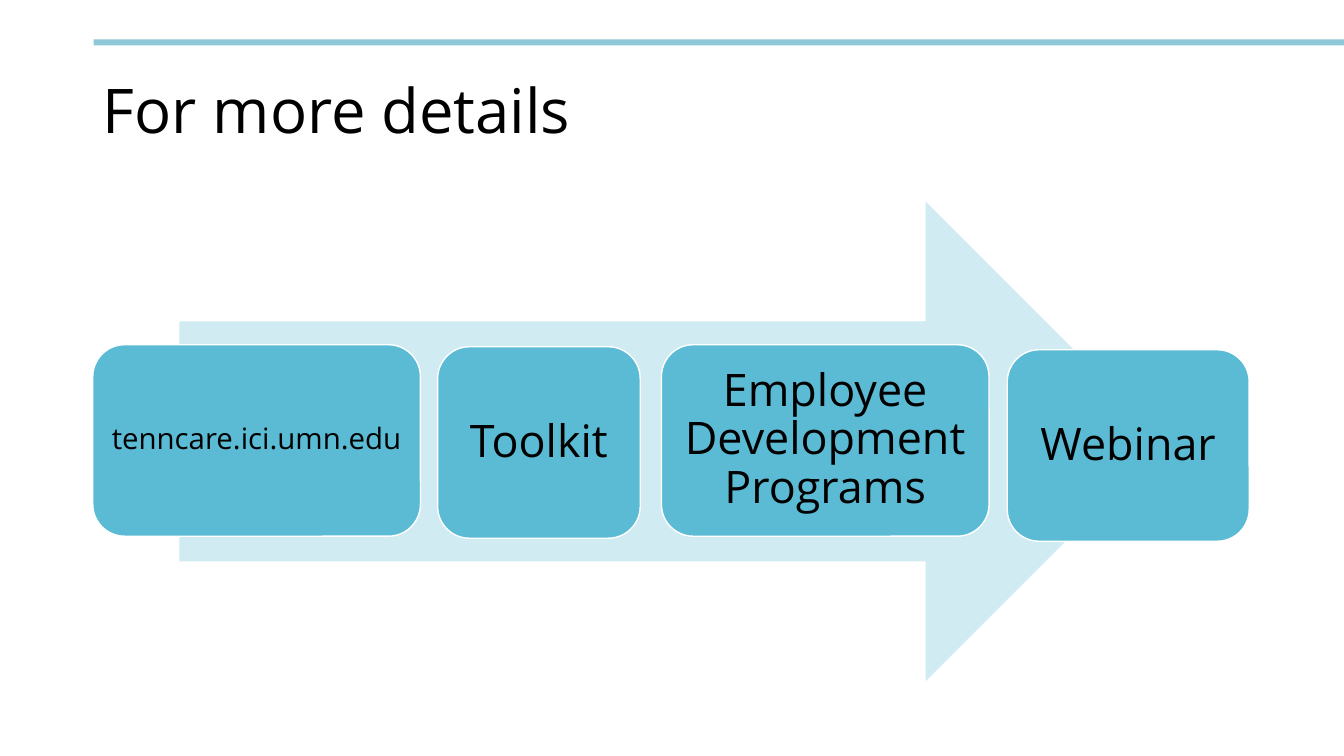
from pptx import Presentation
from pptx.dml.color import RGBColor
from pptx.enum.shapes import MSO_SHAPE as Shape
from pptx.enum.text import MSO_ANCHOR as Anchor, PP_ALIGN as Align
from pptx.util import Inches, Pt

COLORS = {"rule": "8EC7D7", "arrow": "D0EBF2", "step": "5BBBD5",
          "outline": "FFFFFF", "text": "000000"}

prs = Presentation()
prs.slide_width, prs.slide_height = Inches(13.33), Inches(7.5)
slide = prs.slides.add_slide(prs.slide_layouts[6])


def add_block(kind, left, top, width, height, color):
    block = slide.shapes.add_shape(
        kind, Inches(left), Inches(top), Inches(width), Inches(height))
    block.shadow.inherit = False
    block.fill.solid()
    block.fill.fore_color.rgb = RGBColor.from_string(COLORS[color])
    block.line.fill.background()
    return block


def write(frame, text, size, align):
    frame.word_wrap = True
    frame.vertical_anchor = Anchor.MIDDLE
    paragraph = frame.paragraphs[0]
    paragraph.alignment = align
    paragraph.line_spacing = 0.9
    run = paragraph.add_run()
    run.text = text
    run.font.size = Pt(size)
    run.font.name = "Open Sans"
    run.font.color.rgb = RGBColor.from_string(COLORS["text"])


# Top rule and title
add_block(Shape.RECTANGLE, 0.93, 0.39, 12.4, 0.06, "rule")
title = slide.shapes.add_textbox(Inches(0.92), Inches(0.4), Inches(11.5), Inches(1.45))
write(title.text_frame, "For more details", 44, Align.LEFT)

# Arrow behind the steps
add_block(Shape.RIGHT_ARROW, 1.78, 2, 9.78, 4.76, "arrow")

# Steps: text, left, top, width, text size, inset
steps = [
    ("tenncare.ici.umn.edu", 0.92, 3.42, 3.25, 21, 0.09),
    ("Toolkit", 4.34, 3.44, 2.01, 32, 0.13),
    ("Employee Development Programs", 6.56, 3.42, 3.25, 32, 0.13),
    ("Webinar", 9.99, 3.47, 2.4, 32, 0.13),
]
for text, left, top, width, size, inset in steps:
    step = add_block(Shape.ROUNDED_RECTANGLE, left, top, width, 1.9, "step")
    step.line.color.rgb = RGBColor.from_string(COLORS["outline"])
    step.line.width = Pt(1)
    frame = step.text_frame
    frame.margin_left = frame.margin_right = Inches(inset)
    frame.margin_top = frame.margin_bottom = Inches(inset)
    write(frame, text, size, Align.CENTER)

prs.save("out.pptx")
